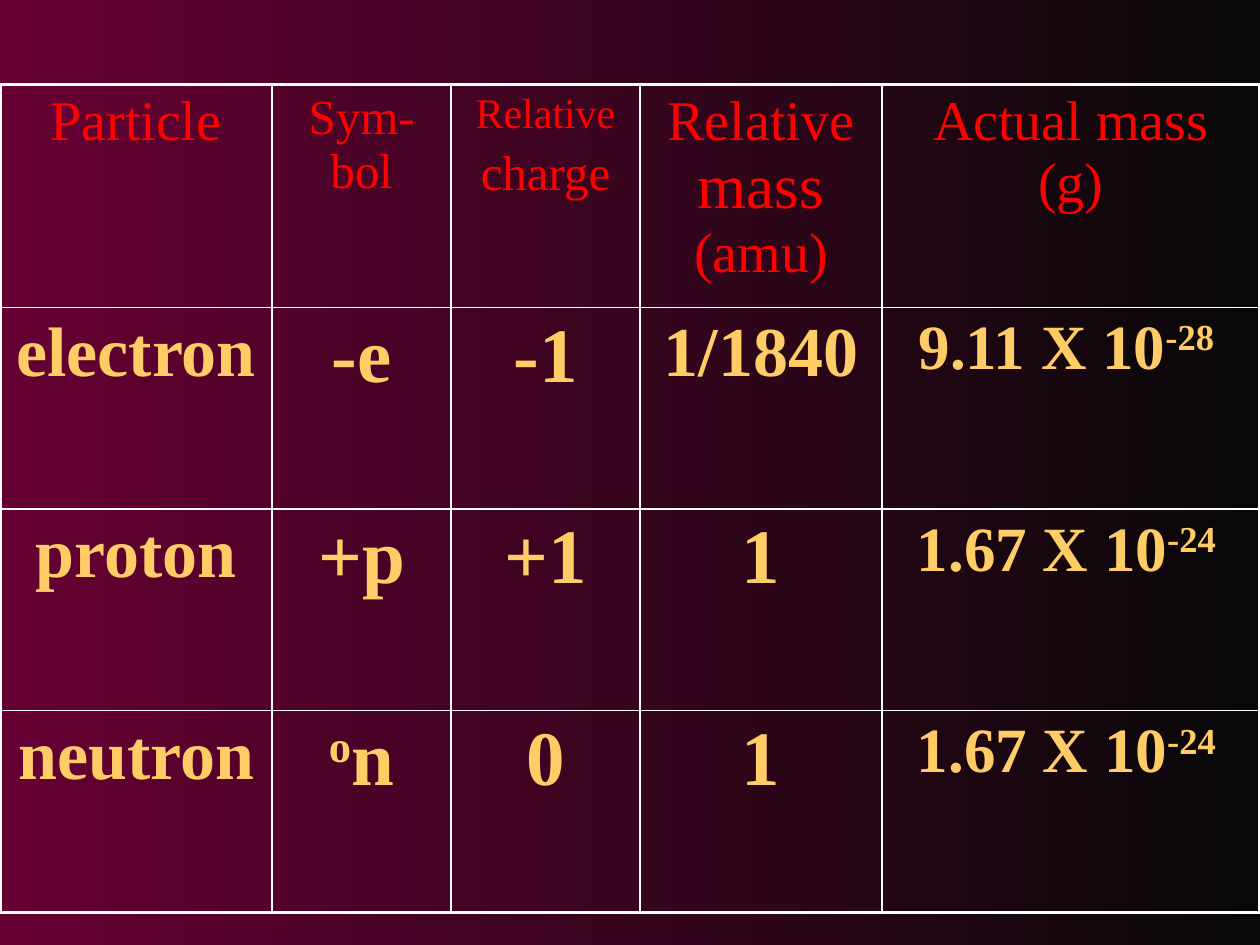
from dataclasses import dataclass

from lxml.etree import SubElement
from pptx import Presentation
from pptx.dml.color import RGBColor as Color
from pptx.enum.text import PP_ALIGN as Align
from pptx.oxml.ns import qn
from pptx.util import Inches, Pt


@dataclass(frozen=True)
class Theme:
    font: str = "Times New Roman"
    background: tuple = ("660033", "080808")
    heading: str = "FF0000"
    body: str = "FFCC66"
    line: str = "FFFFFF"
    thin: float = 1
    thick: float = 2.25
    caption: int = 24
    label: int = 28
    title: int = 32
    value: int = 36
    name: int = 40
    symbol: int = 44
    superscript: int = 30000
    space_before: int = 20000


theme = Theme()


def add_border(cell, side, width):
    line = SubElement(cell._tc.get_or_add_tcPr(), qn(f"a:ln{side}"), w=str(Pt(width)))
    fill = SubElement(line, qn("a:solidFill"))
    SubElement(fill, qn("a:srgbClr"), val=theme.line)


def add_paragraph(paragraph, runs, color, bold):
    paragraph.alignment = Align.CENTER
    spacing = SubElement(paragraph._p.get_or_add_pPr(), qn("a:spcBef"))
    SubElement(spacing, qn("a:spcPct"), val=str(theme.space_before))
    paragraph.font.name = theme.font
    paragraph.font.bold = bold
    paragraph.font.color.rgb = Color.from_string(color)
    for text, size, *raised in runs:
        run = paragraph.add_run()
        run.text = text
        run.font.size = Pt(size)
        if raised:
            run.font._element.set("baseline", str(theme.superscript))


headings = [
    [[("Particle", theme.title)]],
    [[("Sym-bol", theme.label)]],
    [[("Relative", theme.caption)], [("charge", theme.label)]],
    [[("Relative ", theme.title), ("mass", theme.value), (" (amu)", theme.title)]],
    [[("Actual mass (g)", theme.title)]],
]
particles = [
    ("electron", [("-e", theme.symbol)], "-1", ("1/1840", theme.name), "9.11", "-28 "),
    ("proton", [("+p", theme.symbol)], "+1", ("1", theme.symbol), "1.67", "-24 "),
    ("neutron", [("o", theme.symbol, True), ("n", theme.symbol)], "0",
     ("1", theme.symbol), "1.67", "-24 "),
]
rows = [headings]
for name, symbol, charge, relative_mass, mantissa, exponent in particles:
    rows.append([
        [[(name, theme.name)]],
        [symbol],
        [[(charge, theme.symbol)]],
        [[relative_mass]],
        [[(f"{mantissa} X 10", theme.value), (exponent, theme.value, True)]],
    ])

column_widths = [2.16, 1.42, 1.5, 1.92, 3]
row_heights = [1.77] + [1.6] * len(particles)

presentation = Presentation()
presentation.slide_width = Inches(10)
presentation.slide_height = Inches(7.5)
slide = presentation.slides.add_slide(presentation.slide_layouts[6])

background = slide.background.fill
background.gradient()
background.gradient_angle = 0
for stop, color in zip(background.gradient_stops, theme.background):
    stop.color.rgb = Color.from_string(color)

table = slide.shapes.add_table(
    len(rows), len(column_widths), 0, Inches(0.67),
    Inches(sum(column_widths)), Inches(sum(row_heights)),
).table
table.first_row = False
table.horz_banding = False
for column, width in zip(table.columns, column_widths):
    column.width = Inches(width)
for row, height in zip(table.rows, row_heights):
    row.height = Inches(height)

last_row, last_column = len(rows) - 1, len(column_widths) - 1
for row_index, row in enumerate(rows):
    is_heading = row_index == 0
    for column_index, paragraphs in enumerate(row):
        cell = table.cell(row_index, column_index)
        outer_edges = {
            "L": column_index == 0,
            "R": column_index == last_column,
            "T": row_index == 0,
            "B": row_index == last_row,
        }
        for side, is_outer in outer_edges.items():
            add_border(cell, side, theme.thick if is_outer else theme.thin)
        cell.fill.background()
        frame = cell.text_frame
        for index, runs in enumerate(paragraphs):
            paragraph = frame.add_paragraph() if index else frame.paragraphs[0]
            add_paragraph(paragraph, runs, theme.heading if is_heading else theme.body,
                          not is_heading)

presentation.save("out.pptx")
